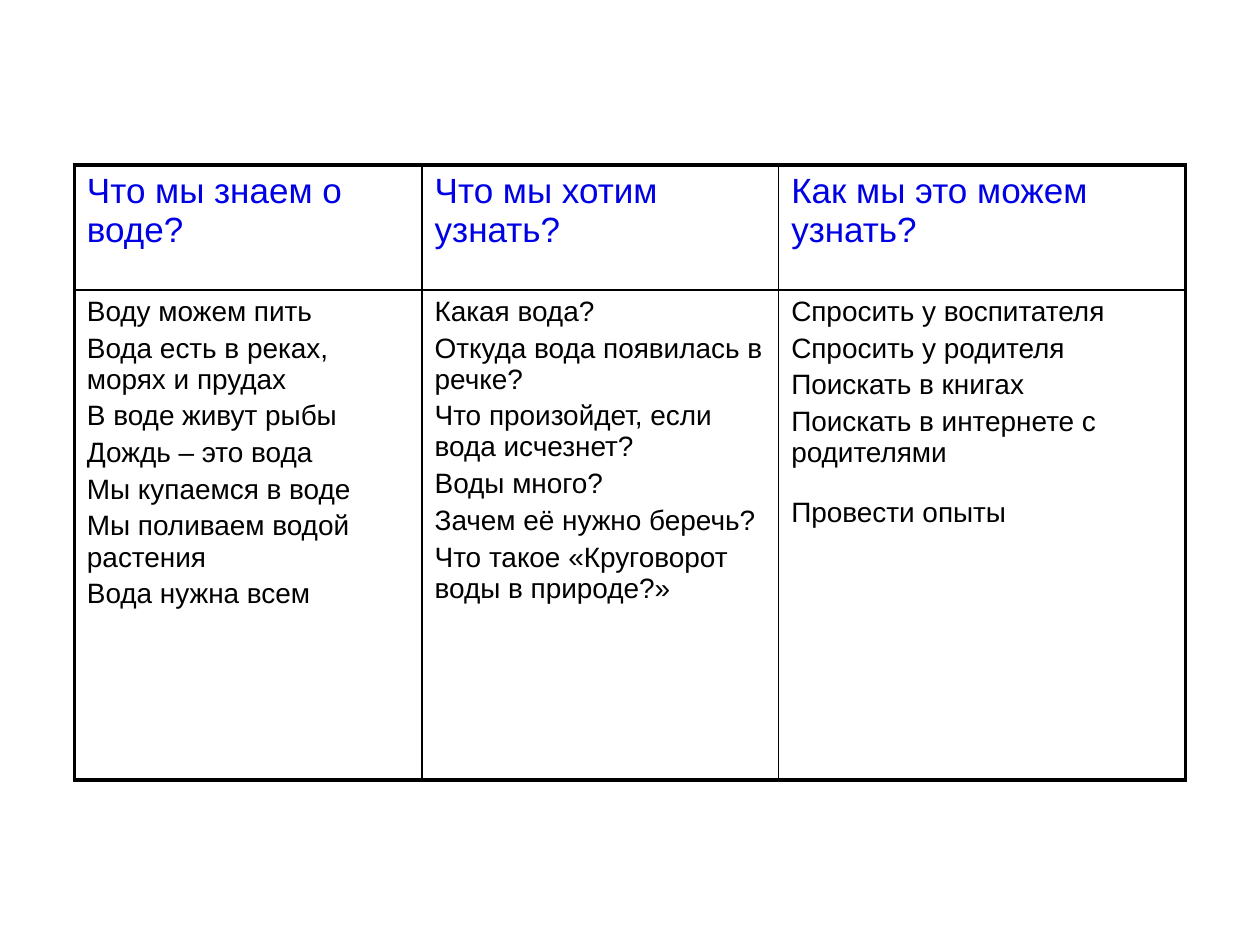
from dataclasses import dataclass

from lxml.etree import SubElement
from pptx import Presentation
from pptx.dml.color import RGBColor as RGB
from pptx.oxml.ns import qn
from pptx.util import Inches, Pt


@dataclass(frozen=True)
class Theme:
    font: str = "Arial"
    heading: RGB = RGB(0x00, 0x00, 0xE5)
    text: RGB = RGB(0x00, 0x00, 0x00)
    paper: RGB = RGB(0xFF, 0xFF, 0xFF)
    border: str = "000000"
    heading_size: float = 20
    text_size: float = 16
    gap: float = 3.2
    wide_gap: float = 16.6
    outer: float = 2.25
    inner: float = 1


HEADINGS = ["Что мы знаем о воде?", "Что мы хотим узнать?", "Как мы это можем узнать?"]
ANSWERS = [
    [
        "Воду можем пить",
        "Вода есть в реках, морях и прудах",
        "В воде живут рыбы",
        "Дождь – это вода",
        "Мы купаемся в воде",
        "Мы поливаем водой растения",
        "Вода нужна всем",
    ],
    [
        "Какая вода?",
        "Откуда вода появилась в речке?",
        "Что произойдет, если вода исчезнет?",
        "Воды много?",
        "Зачем её нужно беречь?",
        "Что такое «Круговорот воды в природе?»",
    ],
    [
        "Спросить у воспитателя",
        "Спросить у родителя",
        "Поискать в книгах",
        "Поискать в интернете с родителями",
        "Провести опыты",
    ],
]


class Deck:
    def __init__(self, theme, width, height):
        self.theme = theme
        self.prs = Presentation()
        self.prs.slide_width, self.prs.slide_height = Inches(width), Inches(height)
        self.s = self.prs.slides.add_slide(self.prs.slide_layouts[6])

    def x(self, share):
        return round(self.prs.slide_width * share / 100)

    def y(self, share):
        return round(self.prs.slide_height * share / 100)

    def table(self, left, top, cols, rows, cells):
        frame = self.s.shapes.add_table(
            len(rows), len(cols), self.x(left), self.y(top),
            self.x(sum(cols)), self.y(sum(rows)))
        table = frame.table
        table.first_row = table.horz_banding = False
        for column, share in zip(table.columns, cols):
            column.width = self.x(share)
        for row, share in zip(table.rows, rows):
            row.height = self.y(share)
        for i, line in enumerate(cells):
            for j, paragraphs in enumerate(line):
                cell = table.cell(i, j)
                self.fill_text(cell.text_frame, paragraphs, heading=i == 0)
                self.frame_cell(cell, L=j == 0, R=j == len(cols) - 1,
                                T=i == 0, B=i == len(rows) - 1)
        return table

    def fill_text(self, tf, paragraphs, heading):
        t = self.theme
        tf.text = "\n".join(paragraphs)
        for k, p in enumerate(tf.paragraphs):
            p.space_before = Pt(t.gap if k else 0)
            p.font.name = t.font
            p.font.size = Pt(t.heading_size if heading else t.text_size)
            p.font.color.rgb = t.heading if heading else t.text

    def frame_cell(self, cell, **outer_sides):
        t = self.theme
        props = cell._tc.get_or_add_tcPr()
        for side, is_outer in outer_sides.items():
            width = Pt(t.outer if is_outer else t.inner)
            ln = SubElement(props, qn(f"a:ln{side}"), w=str(width))
            fill = SubElement(ln, qn("a:solidFill"))
            SubElement(fill, qn("a:srgbClr"), val=t.border)
        cell.fill.solid()
        cell.fill.fore_color.rgb = t.paper


def main():
    theme = Theme()
    deck = Deck(theme, 10, 7.5)
    table = deck.table(5.9, 17.47, [27.6, 28.3, 32.3], [13.2, 51.87],
                       [[[heading] for heading in HEADINGS], ANSWERS])
    experiments = table.cell(1, 2).text_frame.paragraphs[-1]
    experiments.space_before = Pt(theme.wide_gap)
    deck.prs.save("out.pptx")


if __name__ == "__main__":
    main()
